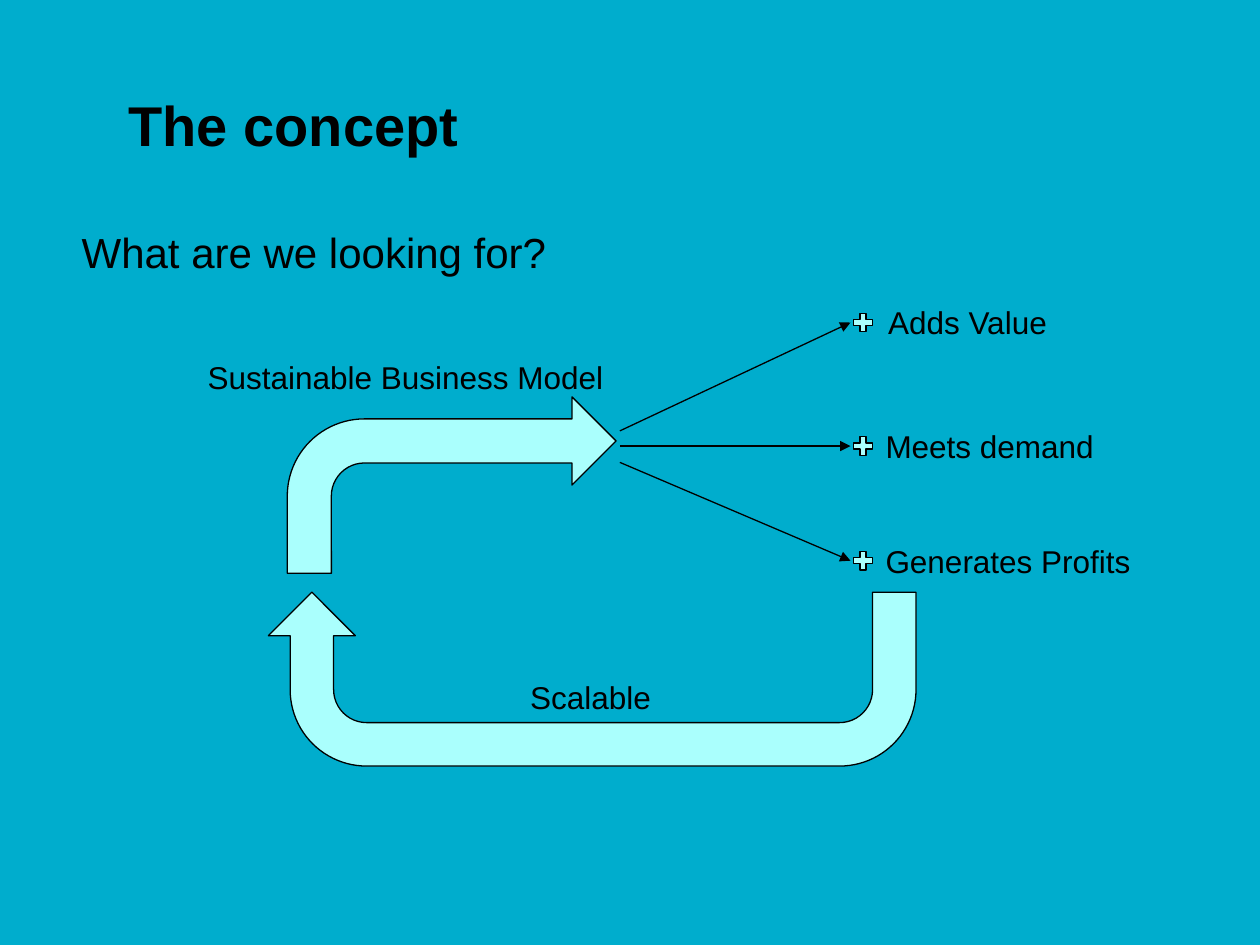
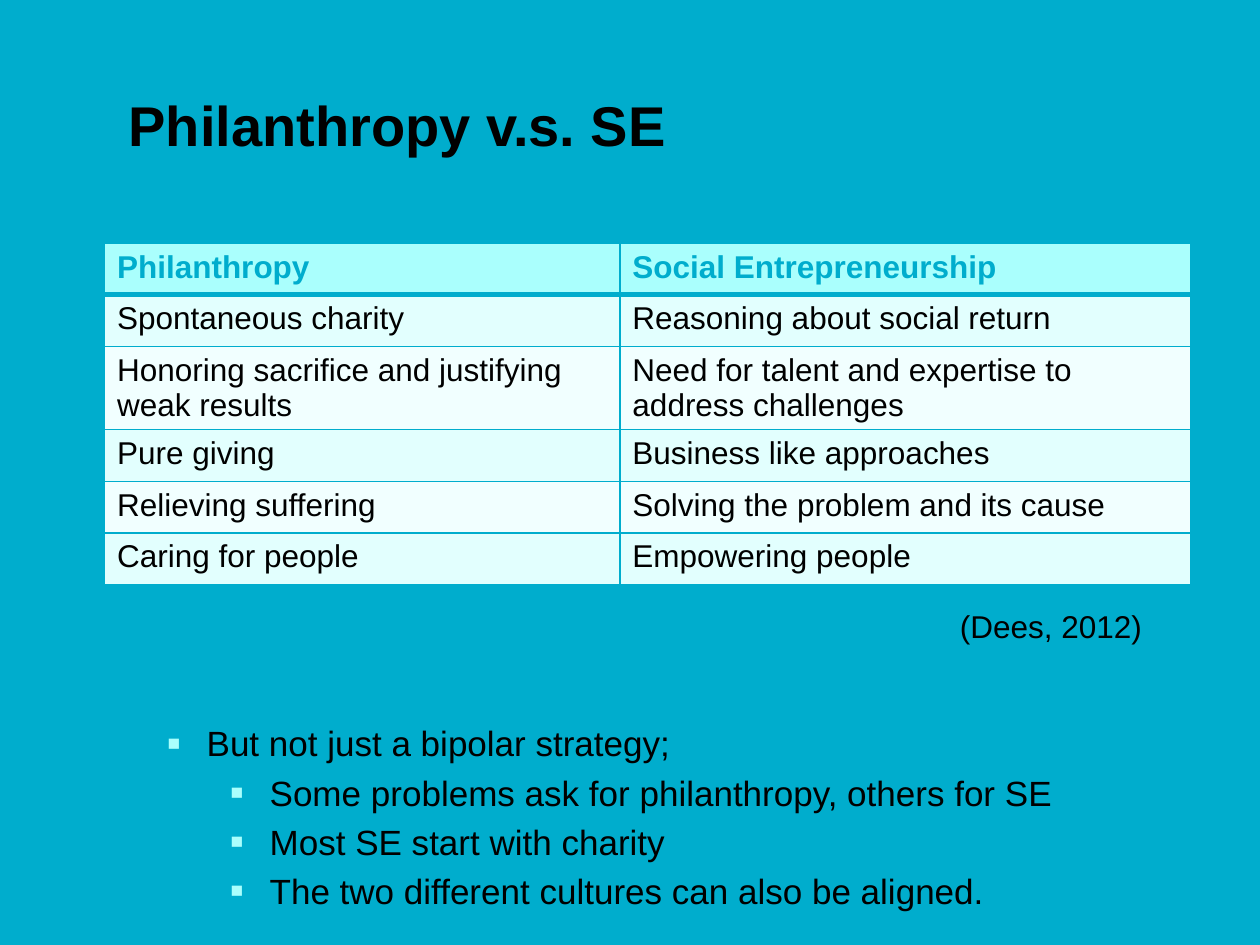
from lxml import etree
from pptx import Presentation
from pptx.dml.color import RGBColor
from pptx.enum.shapes import MSO_CONNECTOR, MSO_SHAPE
from pptx.enum.text import MSO_ANCHOR, MSO_AUTO_SIZE, PP_ALIGN
from pptx.oxml import parse_xml
from pptx.oxml.ns import nsdecls, qn
from pptx.util import Inches, Pt

# Content of slide 1
CONCEPT_TITLE = "The concept"
LABELS = [  # text, left, top, width, height, size
    ("What are we looking for?", 0.55, 1.75, 3.93, 0.5, 24),
    ("Sustainable Business Model", 1.55, 2.79, 3.37, 0.4, 18),
    ("Scalable", 4.11, 5.33, 1.17, 0.4, 18),
]
OUTCOMES = [  # text, arrow start y, arrow end y, text left, text width
    ("Adds Value", 3.42, 2.56, 6.95, 1.54),
    ("Meets demand", 3.54, 3.54, 6.93, 1.87),
    ("Generates Profits", 3.67, 4.45, 6.93, 2.17),
]
ARROW_START_X, ARROW_END_X, PLUS_SIZE = 4.92, 6.75, 0.2

# Content of slide 2
COMPARISON_TITLE = "Philanthropy v.s. SE"
COMPARISON = [
    ("Philanthropy", "Social Entrepreneurship"),
    ("Spontaneous charity", "Reasoning about social return"),
    ("Honoring sacrifice and justifying weak results",
     "Need for talent and expertise to address challenges"),
    ("Pure giving", "Business like approaches"),
    ("Relieving suffering", "Solving the problem and its cause"),
    ("Caring for people", "Empowering people"),
]
COLUMN_WIDTHS = (4.09, 4.53)
ROW_HEIGHT = 0.41
CITATION = ("(Dees, 2012)", 7.52, 4.77, 1.93, 0.4, 18)
REMARKS = [  # level, text
    (0, "But not just a bipolar strategy;"),
    (1, "Some problems ask for philanthropy, others for SE"),
    (1, "Most SE start with charity"),
    (1, "The two different cultures can also be aligned."),
]

# Shared style
FONT = "Arial"
BACKGROUND, ACCENT, INK = "00ADCD", "AAFFFD", "000000"
BANDS = ("F1FFFF", "E2FFFE")


def rgb(value):
    return RGBColor.from_string(value)


def place(item, left, top, width, height):
    item.left, item.top = Inches(left), Inches(top)
    item.width, item.height = Inches(width), Inches(height)


def style_runs(frame, size, color=INK, bold=False):
    for paragraph in frame.paragraphs:
        paragraph.alignment = PP_ALIGN.LEFT
        for run in paragraph.runs:
            run.font.name, run.font.size, run.font.bold = FONT, Pt(size), bold
            run.font.color.rgb = rgb(color)


def add_slide(prs, layout, title):
    slide = prs.slides.add_slide(prs.slide_layouts[layout])
    heading = slide.shapes.title
    place(heading, 0.92, 0.66, 6.75, 0.64)
    frame = heading.text_frame
    frame.text = title
    frame.vertical_anchor = MSO_ANCHOR.BOTTOM
    frame.auto_size = MSO_AUTO_SIZE.NONE
    style_runs(frame, 32, bold=True)
    return slide


def add_label(slide, text, left, top, width, height, size, wrap=False):
    box = slide.shapes.add_textbox(*map(Inches, (left, top, width, height)))
    box.text_frame.text = text
    box.text_frame.word_wrap = wrap
    style_runs(box.text_frame, size)


def add_accent_shape(slide, kind, left, top, width, height):
    shape = slide.shapes.add_shape(kind, *map(Inches, (left, top, width, height)))
    shape.shadow.inherit = False
    shape.fill.solid()
    shape.fill.fore_color.rgb = rgb(ACCENT)
    shape.line.color.rgb = rgb(INK)
    shape.line.width = Pt(0.75)
    return shape


def add_arrow(slide, x1, y1, x2, y2):
    arrow = slide.shapes.add_connector(
        MSO_CONNECTOR.STRAIGHT, *map(Inches, (x1, y1, x2, y2)))
    arrow.line.color.rgb = rgb(INK)
    arrow.line.width = Pt(0.75)
    etree.SubElement(arrow.line._get_or_add_ln(), qn("a:tailEnd"), type="triangle")
    etree.SubElement(arrow._element.spPr, qn("a:effectLst"))


def set_borders(cell, top, bottom):
    properties = cell._tc.get_or_add_tcPr()
    edges = (("lnL", 1), ("lnR", 1), ("lnT", top), ("lnB", bottom))
    for position, (edge, width) in enumerate(edges):
        properties.insert(position, parse_xml(
            f'<a:{edge} {nsdecls("a")} w="{Pt(width)}"><a:solidFill>'
            f'<a:srgbClr val="{BACKGROUND}"/></a:solidFill></a:{edge}>'))


def set_bullet(paragraph, indent):
    properties = paragraph._p.get_or_add_pPr()
    properties.set("marL", str(Inches(indent)))
    properties.set("indent", str(Inches(-0.31)))
    for element in (f'buClr {nsdecls("a")}><a:srgbClr val="{ACCENT}"/></a:buClr>',
                    f'buSzPct {nsdecls("a")} val="60000"/>',
                    f'buFont {nsdecls("a")} typeface="{FONT}"/>',
                    f'buChar {nsdecls("a")} char="■"/>'):
        properties.append(parse_xml("<a:" + element))


def build_concept(prs):
    slide = add_slide(prs, 5, CONCEPT_TITLE)

    # Outcomes, each reached by an arrow
    for text, start_y, end_y, left, width in OUTCOMES:
        add_arrow(slide, ARROW_START_X, start_y, ARROW_END_X, end_y)
        add_accent_shape(slide, MSO_SHAPE.MATH_PLUS, ARROW_END_X,
                         end_y - PLUS_SIZE / 2, PLUS_SIZE, PLUS_SIZE)
        add_label(slide, text, left, end_y - 0.2, width, 0.4, 18)

    # Loop back from the outcomes to the model
    scale_loop = add_accent_shape(slide, MSO_SHAPE.U_TURN_ARROW, 2.13, 4.7, 5.14, 1.38)
    scale_loop.rotation = 180
    for index, value in enumerate((0.25, 0.25, 0.25, 0.44, 1)):
        scale_loop.adjustments[index] = value
    add_accent_shape(slide, MSO_SHAPE.BENT_ARROW, 2.28, 3.15, 2.61, 1.4)

    for label in LABELS:
        add_label(slide, *label)


def build_comparison(prs):
    slide = add_slide(prs, 1, COMPARISON_TITLE)

    # Comparison table
    table = slide.shapes.add_table(
        len(COMPARISON), len(COLUMN_WIDTHS), Inches(0.83), Inches(1.93),
        Inches(sum(COLUMN_WIDTHS)), Inches(ROW_HEIGHT * len(COMPARISON))).table
    for column, width in zip(table.columns, COLUMN_WIDTHS):
        column.width = Inches(width)
    for r, row in enumerate(COMPARISON):
        table.rows[r].height = Inches(ROW_HEIGHT)
        header = r == 0
        for c, text in enumerate(row):
            cell = table.cell(r, c)
            cell.text = text
            cell.fill.solid()
            cell.fill.fore_color.rgb = rgb(ACCENT if header else BANDS[r % 2])
            style_runs(cell.text_frame, 18, BACKGROUND if header else INK, header)
            set_borders(cell, top=3 if r == 1 else 1, bottom=3 if header else 1)
    add_label(slide, *CITATION, wrap=True)

    # Remarks below the table
    body = slide.placeholders[1]
    place(body, 1.14, 5.68, 7.36, 1.61)
    frame = body.text_frame
    frame.auto_size = MSO_AUTO_SIZE.NONE
    for index, (level, text) in enumerate(REMARKS):
        paragraph = frame.paragraphs[0] if index == 0 else frame.add_paragraph()
        paragraph.text = text
        paragraph.level = level
        set_bullet(paragraph, 0.4 + 0.5 * level)
        paragraph.space_before = Pt(4 if index else 0)
    style_runs(frame, 20)


def main():
    prs = Presentation()
    prs.slide_width, prs.slide_height = Inches(10), Inches(7.5)
    backdrop = prs.slide_master.background.fill
    backdrop.solid()
    backdrop.fore_color.rgb = rgb(BACKGROUND)
    build_concept(prs)
    build_comparison(prs)
    prs.save("out.pptx")


if __name__ == "__main__":
    main()
